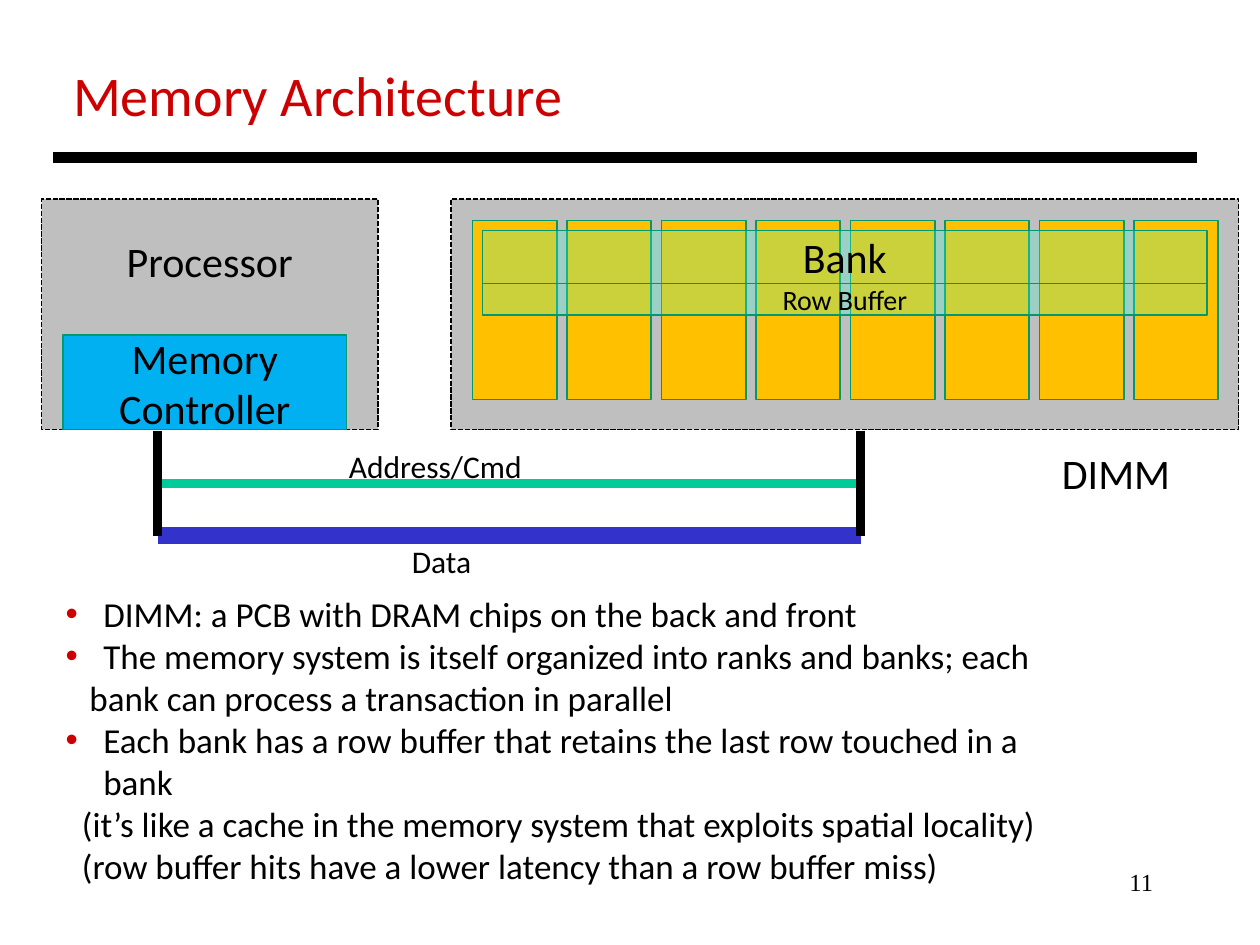
from lxml.etree import SubElement
from pptx import Presentation
from pptx.dml.color import RGBColor
from pptx.enum.dml import MSO_LINE
from pptx.enum.shapes import MSO_CONNECTOR, MSO_SHAPE
from pptx.enum.text import MSO_ANCHOR, MSO_AUTO_SIZE, PP_ALIGN
from pptx.oxml.ns import qn
from pptx.util import Inches, Pt

COLORS = {
    "title": "CC0000", "text": "000000", "panel": "BFBFBF", "outline": "009771",
    "controller": "00B0F0", "chip": "FFC000", "bank": "47FFD1",
    "address": "00CC99", "data": "3333CC",
}
CHIP_COUNT = 8
# Text, left margin in inches, bulleted
NOTES = [
    ("DIMM: a PCB with DRAM chips on the back and front", 0.3, True),
    ("The memory system is itself organized into ranks and banks; each", 0.3, True),
    ("bank can process a transaction in parallel", 0.19, False),
    ("Each bank has a row buffer that retains the last row touched in a bank", 0.3, True),
    ("(it’s like a cache in the memory system that exploits spatial locality)", 0.13, False),
    ("(row buffer hits have a lower latency than a row buffer miss)", 0.13, False),
]


def color(name):
    return RGBColor.from_string(COLORS[name])


def place(shape, box):
    shape.left, shape.top, shape.width, shape.height = map(Inches, box)


def style_paragraph(paragraph, size, align=PP_ALIGN.LEFT, color_name="text", font="Calibri"):
    paragraph.alignment = align
    paragraph.font.size = Pt(size)
    paragraph.font.name = font
    paragraph.font.color.rgb = color(color_name)


def add_label(slide, text, box, size, **style):
    frame = slide.shapes.add_textbox(*map(Inches, box)).text_frame
    frame.word_wrap = False
    frame.text = text
    style_paragraph(frame.paragraphs[0], size, **style)


def add_block(slide, box, fill, text="", size=24, line="outline", dashed=False, opacity=None):
    block = slide.shapes.add_shape(MSO_SHAPE.RECTANGLE, *map(Inches, box))
    block.shadow.inherit = False
    block.fill.solid()
    block.fill.fore_color.rgb = color(fill)
    if opacity is not None:
        rgb = block.fill._xPr.find(".//" + qn("a:srgbClr"))
        SubElement(rgb, qn("a:alpha"), val=str(opacity * 1000))
    block.line.color.rgb = color(line)
    block.line.width = Pt(1)
    if dashed:
        block.line.dash_style = MSO_LINE.SQUARE_DOT
    if text:
        frame = block.text_frame
        frame.text = text
        frame.vertical_anchor = MSO_ANCHOR.MIDDLE
        style_paragraph(frame.paragraphs[0], size, PP_ALIGN.CENTER)
    return block


def add_line(slide, start, end, color_name, width):
    line = slide.shapes.add_connector(MSO_CONNECTOR.STRAIGHT, *map(Inches, start + end))
    line.line.color.rgb = color(color_name)
    line.line.width = Pt(width)
    SubElement(line._element.spPr, qn("a:effectLst"))


def add_heading(slide, box):
    title = slide.shapes.title
    place(title, box)
    frame = title.text_frame
    frame.text = "Memory Architecture"
    frame.word_wrap = False
    frame.auto_size = MSO_AUTO_SIZE.NONE
    style_paragraph(frame.paragraphs[0], 32, color_name="title")
    add_line(slide, (0.42, 1.25), (9.5, 1.25), "text", 6)


def add_processor(slide, box):
    left, top, width, height = box
    processor = add_block(slide, box, "panel", "Processor", line="text", dashed=True)
    processor.text_frame.vertical_anchor = MSO_ANCHOR.TOP
    processor.text_frame.margin_top = Inches(0.29)
    controller = (left + 0.17, top + height - 0.75, 2.25, 0.75)
    add_block(slide, controller, "controller", "Memory Controller")


def add_dimm(slide, box):
    """Draw the module with its chips and the bank that spans them."""
    left, top, width, height = box
    add_block(slide, box, "panel", line="text", dashed=True)
    for index in range(CHIP_COUNT):
        add_block(slide, (left + 0.17 + 0.75 * index, top + 0.17, 0.67, 1.42), "chip")
    bank_left, bank_top, bank_width = left + 0.25, top + 0.25, width - 0.5
    add_block(slide, (bank_left, bank_top, bank_width, 0.42), "bank", "Bank", opacity=28)
    add_block(slide, (bank_left, bank_top + 0.42, bank_width, 0.25), "bank",
              "Row Buffer", size=16, opacity=28)
    add_label(slide, "DIMM", (left + 4.75, top + 1.92, 1.1, 0.51), 24)


def add_bus(slide, box):
    """Draw the address and data lines between two vertical pins."""
    left, top, width, height = box
    right, bottom = left + width, top + height
    middle = top + height / 2
    add_line(slide, (left, middle), (right, middle), "address", 5)
    add_line(slide, (left, bottom), (right, bottom), "data", 10)
    for x in (left, right):
        add_line(slide, (x, top), (x, bottom), "text", 5)
    add_label(slide, "Address/Cmd", (left + 1.42, top + 0.08, 1.59, 0.4), 18)
    add_label(slide, "Data", (left + 1.92, bottom, 0.68, 0.4), 18)


def set_bullet(paragraph, margin, bulleted):
    properties = paragraph._p.get_or_add_pPr()
    properties.set("marL", str(Inches(margin)))
    properties.set("indent", str(-Inches(margin) if bulleted else 0))
    if bulleted:
        bullet_color = SubElement(properties, qn("a:buClr"))
        SubElement(bullet_color, qn("a:srgbClr"), val=COLORS["title"])
        SubElement(properties, qn("a:buChar"), char="•")
    else:
        SubElement(properties, qn("a:buNone"))


def add_notes_list(slide, box):
    body = slide.placeholders[1]
    place(body, box)
    frame = body.text_frame
    frame.text = "\n".join(text for text, _, _ in NOTES)
    frame.word_wrap = True
    frame.auto_size = MSO_AUTO_SIZE.NONE
    for paragraph, (_, margin, bulleted) in zip(frame.paragraphs, NOTES):
        style_paragraph(paragraph, 20)
        paragraph.space_before = Pt(0)
        set_bullet(paragraph, margin, bulleted)


def main():
    presentation = Presentation()
    presentation.slide_width, presentation.slide_height = Inches(10), Inches(7.5)
    slide = presentation.slides.add_slide(presentation.slide_layouts[1])
    add_heading(slide, (0.48, 0.43, 4.12, 0.64))
    add_processor(slide, (0.33, 1.58, 2.67, 1.83))
    add_dimm(slide, (3.58, 1.58, 6.25, 1.83))
    add_bus(slide, (1.25, 3.42, 5.58, 0.83))
    add_notes_list(slide, (0.42, 4.65, 8, 2.4))
    add_label(slide, "11", (7.17, 6.83, 2.08, 0.5), 14,
              align=PP_ALIGN.RIGHT, font="Times New Roman")
    presentation.save("out.pptx")


if __name__ == "__main__":
    main()
